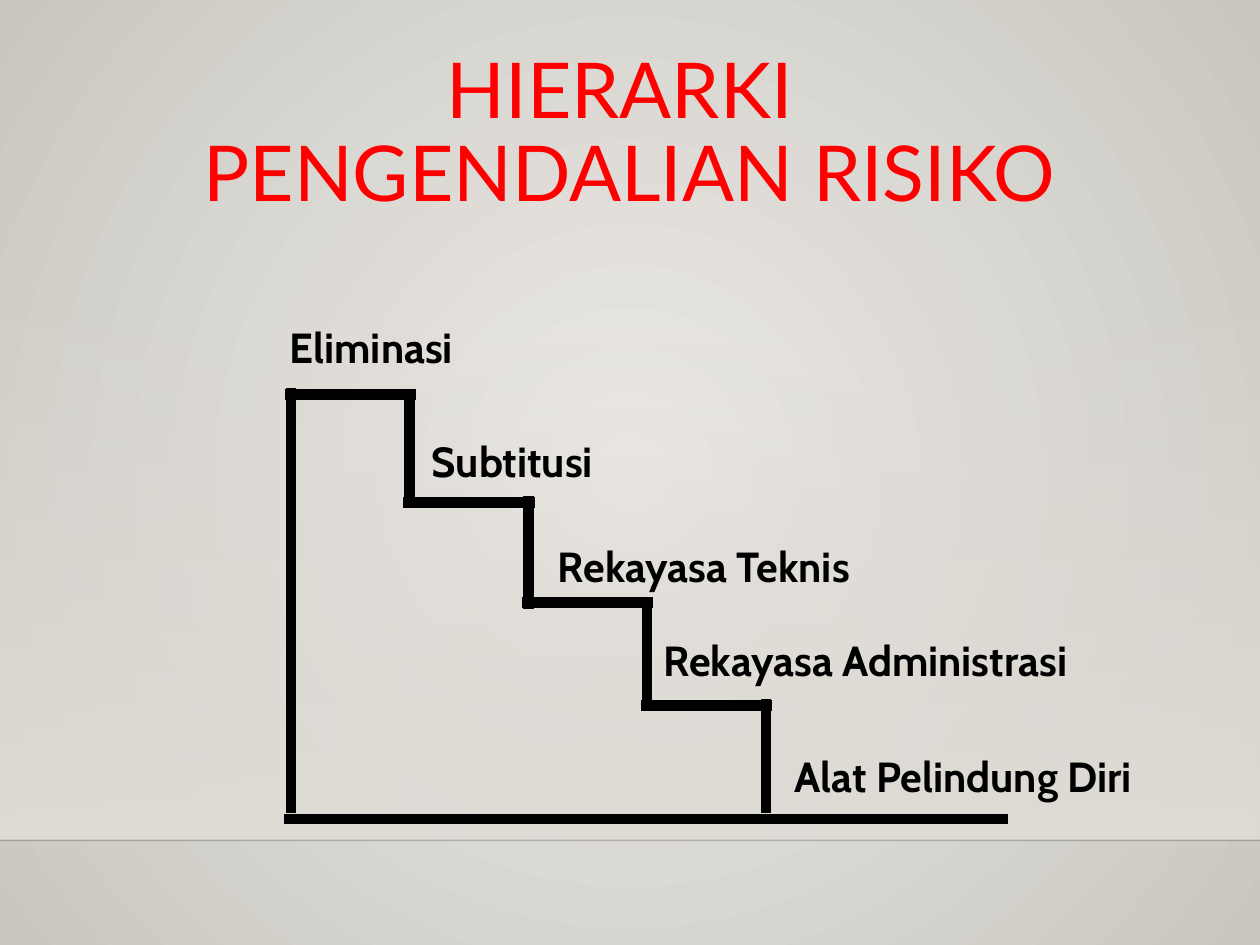
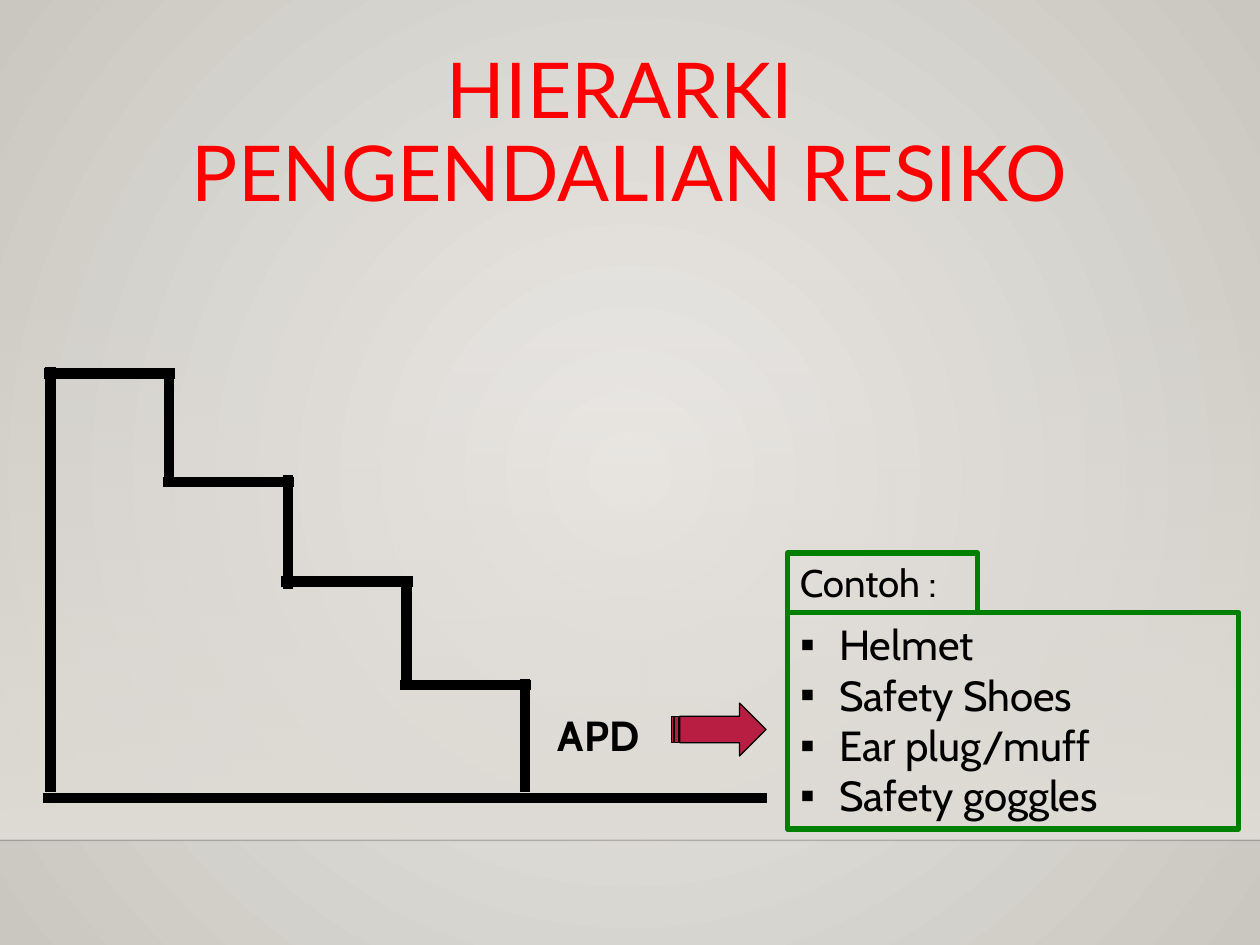
import pptx
import pptx.dml.color
import pptx.enum.shapes
import pptx.enum.text
import pptx.oxml
import pptx.oxml.ns
import pptx.util
from lxml import etree

deck = pptx.Presentation()
deck.slide_width = pptx.util.Inches(10)
deck.slide_height = pptx.util.Inches(7.5)

# Grid: 100 columns by 75 rows, each cell a tenth of an inch
COLUMNS, ROWS = 100, 75
CELL = deck.slide_width // COLUMNS

BLACK, RED, GREEN, CRIMSON = "000000", "FF0000", "008000", "B71E42"
BODY_FONT, TITLE_FONT = "Cabin", "Lato"
HORIZON = 66.7

paint = pptx.dml.color.RGBColor.from_string
qn = pptx.oxml.ns.qn
SHAPE = pptx.enum.shapes.MSO_SHAPE
ANCHOR = pptx.enum.text.MSO_ANCHOR


def add_line(shapes, left, top, right, bottom, width, color):
    ends = [round(cells * CELL) for cells in (left, top, right, bottom)]
    line = shapes.add_connector(pptx.enum.shapes.MSO_CONNECTOR.STRAIGHT, *ends)
    line.line.width = pptx.util.Pt(width)
    line.line.color.rgb = paint(color)
    etree.SubElement(line._element.spPr, qn("a:effectLst"))
    return line


def add_span(para, text, size, color=BLACK, font=BODY_FONT, bold=False):
    span = para.add_run()
    span.text = text
    span.font.size = pptx.util.Pt(size)
    span.font.name = font
    span.font.bold = bold
    span.font.color.rgb = paint(color)


# Shared background: light centre, darker corners
master = deck.slide_master
backdrop = master.background.fill
backdrop.gradient()
for stop, color in zip(backdrop.gradient_stops, ("ECEAE7", "CAC7C1")):
    stop.color.rgb = paint(color)
gradient = next(master._element.iter(qn("a:gradFill")))
gradient.remove(gradient.find(qn("a:lin")))
circle = etree.SubElement(gradient, qn("a:path"), path="circle")
etree.SubElement(circle, qn("a:fillToRect"), l="50000", t="50000", r="50000", b="50000")

# Both pages, with their titles and staircases
pages = []
for layout, last_word, left, top in ((5, "RISIKO", 23.1, 31.3), (1, "RESIKO", 4, 29.65)):
    page = deck.slides.add_slide(deck.slide_layouts[layout])
    pages.append(page)

    title = page.shapes.title
    title.left, title.top = 5 * CELL, round(8.3 * CELL)
    title.width, title.height = 90 * CELL, round(9.5 * CELL)
    title.text_frame.word_wrap = True
    title.text_frame.auto_size = pptx.enum.text.MSO_AUTO_SIZE.NONE
    title.text_frame.vertical_anchor = ANCHOR.BOTTOM
    para = title.text_frame.paragraphs[0]
    para.alignment = pptx.enum.text.PP_ALIGN.CENTER
    para.line_spacing = 0.9
    add_span(para, "HIERARKI ", 44, RED, TITLE_FONT)
    para.add_line_break()
    add_span(para, "PENGENDALIAN " + last_word, 44, RED, TITLE_FONT)

    # Each step is a tread and a riser, overlapping a little at the corners
    stairs = page.shapes.add_group_shape().shapes
    tread, overlap = 9.42, 0.5
    for step, drop in enumerate((0, 8.6, 16.5, 24.7)):
        start, end = left + step * tread, left + (step + 1) * tread
        add_line(stairs, start - overlap, top + drop, end + overlap, top + drop, 6, BLACK)
        riser_top = top + step * 8.07
        add_line(stairs, end, riser_top, end, riser_top + 9, 6, BLACK)
    add_line(stairs, left - 0.6, top + 33.7, left + 56.9, top + 33.7, 6, BLACK)
    add_line(stairs, left, top - overlap, left, top + 33.2, 6, BLACK)

# Shared floor band and horizon line, kept on the master
band = pages[0].shapes.add_shape(SHAPE.RECTANGLE, 0, 22 * CELL, COLUMNS * CELL, round(44.6 * CELL))
band.shadow.inherit = False
band.line.fill.background()
band.fill.gradient()
band.fill.gradient_angle = 270
for stop in band.fill.gradient_stops:
    stop.color.rgb = paint("DFDBD5")
horizon = add_line(pages[0].shapes, 0, HORIZON, COLUMNS, HORIZON, 1, "000001")
for position, (shape, opacity) in enumerate(((band, "0"), (horizon, "20000"))):
    color = next(shape._element.spPr.iter(qn("a:srgbClr")))
    etree.SubElement(color, qn("a:alpha"), val=opacity)
    next(shape._element.iter(qn("p:cNvPr"))).set("id", str(100 + position))
    master.shapes._spTree.insert(2 + position, shape._element)

# Step labels
hierarchy, example = pages
labels = (
    (hierarchy, "Eliminasi", 22, 25, 16.8),
    (hierarchy, "Subtitusi", 33.3, 34.1, 16.4),
    (hierarchy, "Rekayasa Teknis", 43.3, 42.4, 28.9),
    (hierarchy, "Rekayasa Administrasi", 51.7, 49.9, 38.8),
    (hierarchy, "Alat Pelindung Diri", 62.1, 59.1, 32.1),
    (example, "APD", 43.3, 55.8, 10),
)
for page, text, left, top, width in labels:
    frame = [round(cells * CELL) for cells in (left, top, width, 5.1)]
    box = page.shapes.add_textbox(*frame)
    box.text_frame.word_wrap = False
    add_span(box.text_frame.paragraphs[0], text, 24, bold=True)

# Arrow from the last step to its examples
frame = [round(cells * CELL) for cells in (53.3, 55.8, 7.5, 4.2)]
arrow = example.shapes.add_shape(SHAPE.STRIPED_RIGHT_ARROW, *frame)
arrow.shadow.inherit = False
arrow.fill.solid()
arrow.fill.fore_color.rgb = paint(CRIMSON)
arrow.line.color.rgb = paint(BLACK)
arrow.line.width = pptx.util.Pt(0.75)

# Example list with its heading box
items = example.placeholders[1]
heading = example.shapes.add_textbox(0, 0, CELL, CELL)
for box, top, width, height in ((items, 48.6, 35.8, 17.2), (heading, 43.9, 15.1, 4.7)):
    box.left, box.top = round(62.5 * CELL), round(top * CELL)
    box.width, box.height = round(width * CELL), round(height * CELL)
    box.line.color.rgb = paint(GREEN)
    box.line.width = pptx.util.Pt(3)
    box.text_frame.word_wrap = True
    box.text_frame.auto_size = pptx.enum.text.MSO_AUTO_SIZE.NONE
    box.text_frame.vertical_anchor = ANCHOR.TOP
add_span(heading.text_frame.paragraphs[0], "Contoh :", 22)

for number, text in enumerate(("Helmet", "Safety Shoes", "Ear plug/muff", "Safety goggles")):
    frame = items.text_frame
    para = frame.add_paragraph() if number else frame.paragraphs[0]
    properties = para._p.get_or_add_pPr()
    indent = round(3.1 * CELL)
    properties.set("marL", str(indent))
    properties.set("indent", str(-indent))
    etree.SubElement(properties, qn("a:buChar"), char="▪")
    para.space_before = pptx.util.Pt(0)
    add_span(para, text, 24)

deck.save("out.pptx")
